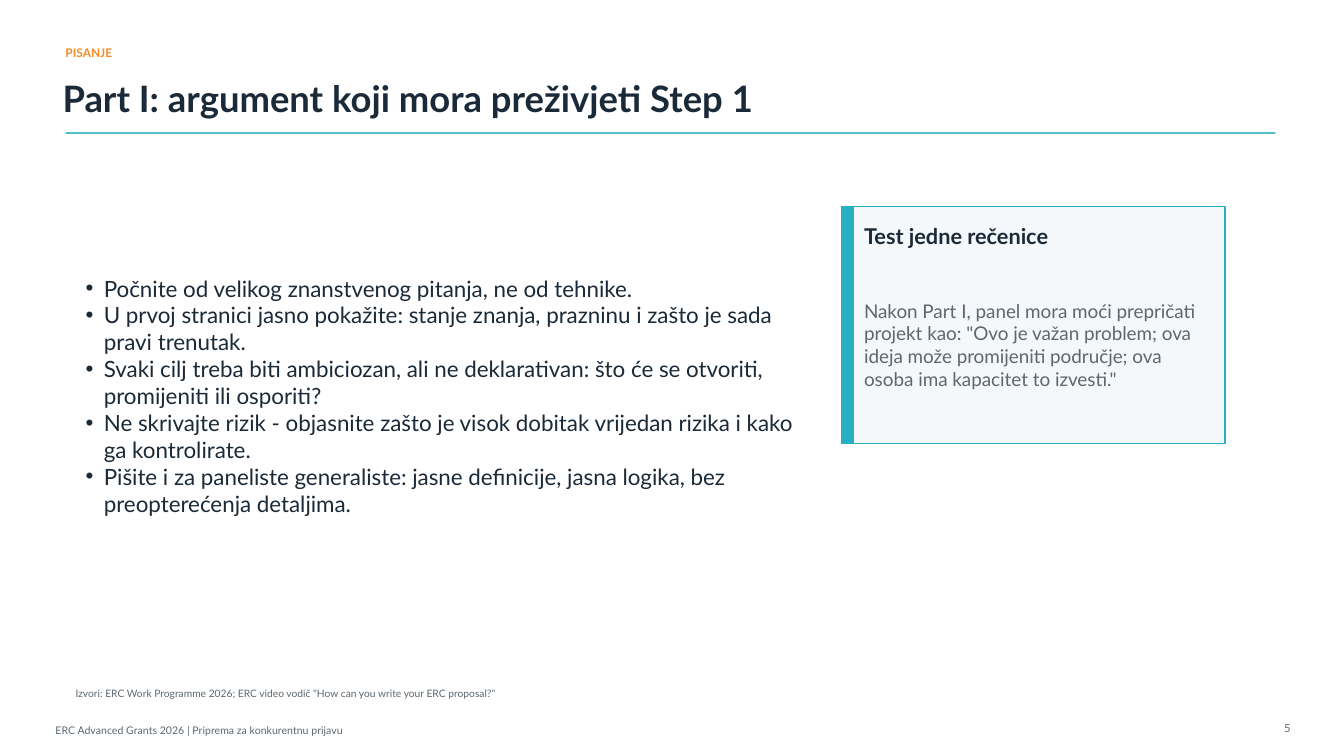
"""Build the slide on Part I of the grant proposal."""
from lxml.etree import SubElement
from pptx import Presentation
from pptx.dml.color import RGBColor as RGB
from pptx.enum.shapes import MSO_CONNECTOR as Conn, MSO_SHAPE as Shape
from pptx.enum.text import MSO_ANCHOR as Anchor, MSO_AUTO_SIZE as Auto, PP_ALIGN as Align
from pptx.oxml.ns import qn
from pptx.util import Inches, Pt

COLORS = {"ink": "1B2A38", "teal": "27AFC4", "orange": "F28C28",
          "gray": "5C6770", "panel": "F5F8FA"}
FONT = "Lato"
SLIDE_W, SLIDE_H = 13.33, 7.5

TITLE = "Part I: argument koji mora preživjeti Step 1"
BULLETS = [
    "Počnite od velikog znanstvenog pitanja, ne od tehnike.",
    "U prvoj stranici jasno pokažite: stanje znanja, prazninu i zašto je sada pravi trenutak.",
    "Svaki cilj treba biti ambiciozan, ali ne deklarativan: što će se otvoriti, promijeniti ili osporiti?",
    "Ne skrivajte rizik - objasnite zašto je visok dobitak vrijedan rizika i kako ga kontrolirate.",
    "Pišite i za paneliste generaliste: jasne definicije, jasna logika, bez preopterećenja detaljima.",
]
CARD_TITLE = "Test jedne rečenice"
CARD_TEXT = ('Nakon Part I, panel mora moći prepričati projekt kao: "Ovo je važan problem; '
             'ova ideja može promijeniti područje; ova osoba ima kapacitet to izvesti."')
SOURCES = 'Izvori: ERC Work Programme 2026; ERC video vodič "How can you write your ERC proposal?"'
FOOTER = "ERC Advanced Grants 2026 | Priprema za konkurentnu prijavu"

CARD_X, CARD_Y, CARD_W, CARD_H = 8.35, 2.05, 3.8, 2.35
BAR_W = 0.11
INNER_X, INNER_W = CARD_X + 2 * BAR_W, 3.45
RULE_X, RULE_Y, RULE_W = 0.65, 1.32, 12

LABELS = [
    ("PISANJE", (RULE_X, 0.4, 11.8, 0.24), 8.5, "orange", True, Align.LEFT),
    (CARD_TITLE, (INNER_X, CARD_Y + 0.15, INNER_W, 0.28), 15.5, "ink", True, Align.LEFT),
    (CARD_TEXT, (INNER_X, CARD_Y + 0.52, INNER_W, 1.7), 13.5, "gray", False, Align.LEFT),
    (SOURCES, (0.75, 6.75, 11.9, 0.25), 7.3, "gray", False, Align.LEFT),
    (FOOTER, (0.55, 7.15, 7.4, 0.2), 7.5, "gray", False, Align.LEFT),
    ("5", (12.55, 7.12, 0.25, 0.2), 8, "gray", False, Align.RIGHT),
]


def color(name):
    return RGB.from_string(COLORS[name])


def place(sp, box):
    sp.left, sp.top, sp.width, sp.height = map(Inches, box)


def write(sp, text, size, ink, bold=False, align=Align.LEFT):
    tf = sp.text_frame
    tf.text = text
    tf.word_wrap = True
    tf.auto_size = Auto.NONE
    tf.vertical_anchor = Anchor.MIDDLE
    tf.margin_left = tf.margin_top = tf.margin_right = tf.margin_bottom = 0
    for p in tf.paragraphs:
        p.alignment = align
        p.space_before = Pt(0)
        for r in p.runs:
            r.font.name, r.font.size, r.font.bold = FONT, Pt(size), bold
            r.font.color.rgb = color(ink)


def add_bullets(sp, indent):
    for p in sp.text_frame.paragraphs:
        pPr = p._p.get_or_add_pPr()
        pPr.set("marL", str(Inches(indent)))
        pPr.set("indent", str(-Inches(indent)))
        SubElement(pPr, qn("a:buChar"), char="•")


def add_panel(slide, box, fill, line_width):
    sp = slide.shapes.add_shape(Shape.RECTANGLE, *map(Inches, box))
    sp.shadow.inherit = False
    sp.fill.solid()
    sp.fill.fore_color.rgb = color(fill)
    sp.line.color.rgb = color("teal")
    sp.line.width = Pt(line_width)


def add_rule(slide):
    ends = (RULE_X, RULE_Y, RULE_X + RULE_W, RULE_Y)
    rule = slide.shapes.add_connector(Conn.STRAIGHT, *map(Inches, ends))
    rule.line.color.rgb = color("teal")
    rule.line.width = Pt(1.1)
    spPr = rule._element.spPr
    SubElement(spPr.find(".//" + qn("a:srgbClr")), qn("a:alpha"), val="80000")
    SubElement(spPr, qn("a:effectLst"))


def main():
    prs = Presentation()
    prs.slide_width, prs.slide_height = Inches(SLIDE_W), Inches(SLIDE_H)
    slide = prs.slides.add_slide(prs.slide_layouts[1])
    title, body = slide.placeholders
    place(title, (0.62, 0.7, 11.9, 0.55))
    write(title, TITLE, 26, "ink", True)
    place(body, (0.85, 1.75, 7.1, 4.35))
    write(body, "\n".join(BULLETS), 16, "ink")
    add_bullets(body, 0.18)
    add_rule(slide)
    add_panel(slide, (CARD_X, CARD_Y, CARD_W, CARD_H), "panel", 1.1)
    add_panel(slide, (CARD_X, CARD_Y, BAR_W, CARD_H), "teal", 1)
    for text, box, *style in LABELS:
        write(slide.shapes.add_textbox(*map(Inches, box)), text, *style)
    prs.save("out.pptx")


if __name__ == "__main__":
    main()
